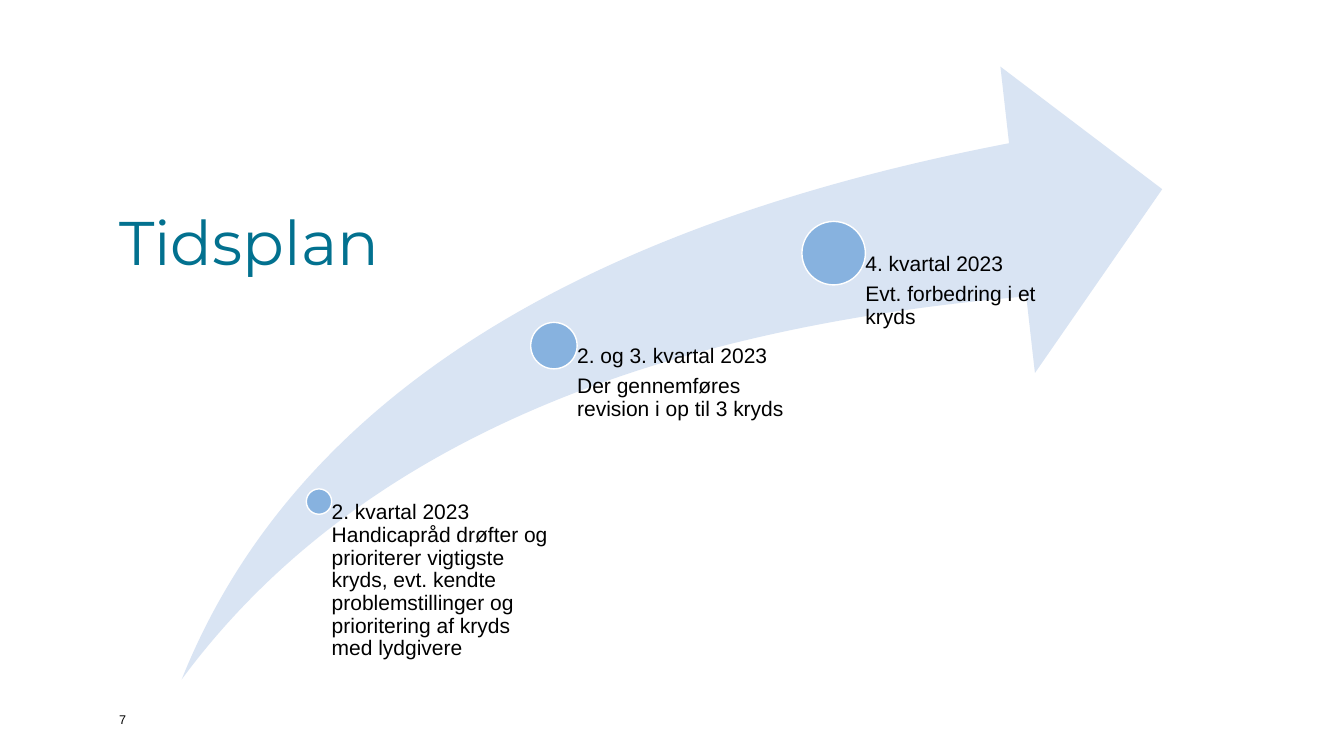
from pptx import Presentation
from pptx.dml.color import RGBColor
from pptx.enum.shapes import MSO_SHAPE as Preset
from pptx.enum.text import MSO_ANCHOR as Anchor
from pptx.util import Cm, Pt

TEAL = RGBColor(0x02, 0x71, 0x8F)
PALE_BLUE = RGBColor(0xD9, 0xE4, 0xF3)
BLUE = RGBColor(0x87, 0xB2, 0xDF)
WHITE = RGBColor(0xFF, 0xFF, 0xFF)
BLACK = RGBColor(0x00, 0x00, 0x00)

ARROW_BOTTOM = 17.12
MARGIN_LEFT = 3.0

# Centre x, centre y, dot diameter, text width, paragraphs
MILESTONES = [
    (8.04, 12.64, 0.64, 5.77, [
        "2. kvartal 2023 Handicapråd drøfter og prioriterer vigtigste kryds, "
        "evt. kendte problemstillinger og prioritering af kryds med lydgivere"]),
    (13.96, 8.71, 1.17, 5.94, [
        "2. og 3. kvartal 2023", "Der gennemføres revision i op til 3 kryds"]),
    (21.01, 6.38, 1.6, 5.94, [
        "4. kvartal 2023", "Evt. forbedring i et kryds"]),
]


def add_text(page, left, top, width, height, lines, size, font="Arial",
             color=BLACK, anchor=Anchor.TOP, inset=0):
    """Add a wrapping text box with one paragraph per line; lengths in cm."""
    box = page.shapes.add_textbox(Cm(left), Cm(top), Cm(width), Cm(height))
    frame = box.text_frame
    frame.word_wrap = True
    frame.vertical_anchor = anchor
    frame.margin_left = Cm(inset)
    frame.margin_top = frame.margin_right = frame.margin_bottom = 0
    for index, line in enumerate(lines):
        para = frame.add_paragraph() if index else frame.paragraphs[0]
        span = para.add_run()
        span.text = line
        span.font.size = Pt(size)
        span.font.name = font
        span.font.color.rgb = color
    return frame


def add_filled(page, preset, left, top, width, height, color):
    shape = page.shapes.add_shape(preset, Cm(left), Cm(top), Cm(width), Cm(height))
    shape.shadow.inherit = False
    shape.fill.solid()
    shape.fill.fore_color.rgb = color
    return shape


deck = Presentation()
deck.slide_width = Cm(33.87)
deck.slide_height = Cm(19.05)
page = deck.slides.add_slide(deck.slide_layouts[6])

add_text(page, MARGIN_LEFT, 3.71, 27.86, 3.3, ["Tidsplan"], 44,
         font="Montserrat", color=TEAL, anchor=Anchor.BOTTOM)

arrow = add_filled(page, Preset.SWOOSH_ARROW, 4.58, 1.68, 24.71, 15.44, PALE_BLUE)
arrow.adjustments[0] = 0.25
arrow.adjustments[1] = 0.25
arrow.line.fill.background()

for x, y, diameter, width, lines in MILESTONES:
    radius = diameter / 2
    dot = add_filled(page, Preset.OVAL, x - radius, y - radius,
                     diameter, diameter, BLUE)
    dot.line.color.rgb = WHITE
    dot.line.width = Pt(1)
    frame = add_text(page, x, y, width, ARROW_BOTTOM - y, lines, 15, inset=radius)
    for para in frame.paragraphs:
        para.line_spacing = 0.9
        para.space_after = Pt(5.25)

add_text(page, MARGIN_LEFT, 17.81, 1.09, 0.51, ["7"], 9, anchor=Anchor.BOTTOM)

deck.save("out.pptx")
